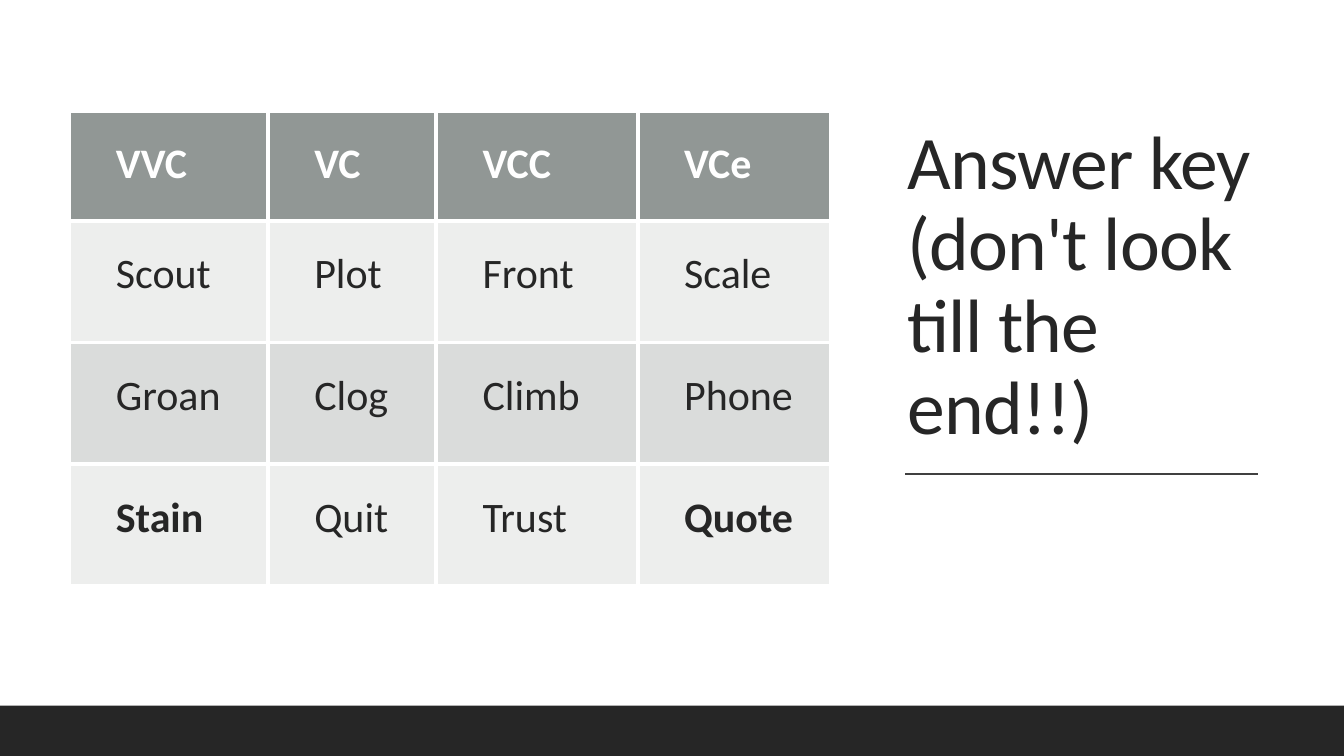
from dataclasses import dataclass

from lxml import etree
from pptx import Presentation
from pptx.dml.color import RGBColor
from pptx.enum.shapes import MSO_CONNECTOR, MSO_SHAPE
from pptx.enum.text import MSO_ANCHOR, MSO_AUTO_SIZE, PP_ALIGN
from pptx.oxml.ns import qn
from pptx.util import Cm, Pt

STRAIGHT = MSO_CONNECTOR.STRAIGHT
RECTANGLE = MSO_SHAPE.RECTANGLE
BOTTOM, TOP = MSO_ANCHOR.BOTTOM, MSO_ANCHOR.TOP
LEFT = PP_ALIGN.LEFT
NO_AUTOFIT = MSO_AUTO_SIZE.NONE
TITLE_ONLY = 5


@dataclass(frozen=True)
class Theme:
    font: str = "Calibri"
    title_size: int = 54
    cell_size: int = 30
    border_width: int = 3
    white: str = "FFFFFF"
    dark: str = "262626"
    rule: str = "404040"
    header: str = "636B68"
    band: str = "878E8B"


@dataclass(frozen=True)
class TableRow:
    words: tuple[str, ...]
    height: float
    fill: str
    opacity: int
    color: str
    bold_words: tuple[str, ...] = ()


THEME = Theme()
SLIDE_WIDTH, SLIDE_HEIGHT = 33.87, 19.05
BAR_HEIGHT = 1.27
COLUMN_WIDTHS = (5.0, 4.24, 5.08, 4.88)
HEADINGS = ("VVC", "VC", "VCC", "VCe")
ROWS = (
    TableRow(HEADINGS, 2.77, THEME.header, 70, THEME.white, HEADINGS),
    TableRow(("Scout", "Plot", "Front", "Scale"), 3.07, THEME.band, 15, THEME.dark),
    TableRow(("Groan", "Clog", "Climb", "Phone"), 3.07, THEME.band, 30, THEME.dark),
    TableRow(("Stain", "Quit", "Trust", "Quote"), 3.07, THEME.band, 15, THEME.dark,
             ("Stain", "Quote")),
)


def rgb(value: str) -> RGBColor:
    return RGBColor.from_string(value)


def style_font(font, size: int, color: str, bold: bool = False) -> None:
    font.name = THEME.font
    font.size = Pt(size)
    font.bold = bold
    font.color.rgb = rgb(color)


def add_title(page, text: str) -> None:
    title = page.shapes.title
    title.left, title.top = Cm(22.61), Cm(1.78)
    title.width, title.height = Cm(9.45), Cm(9.7)
    frame = title.text_frame
    frame.text = text
    frame.word_wrap = True
    frame.auto_size = NO_AUTOFIT
    frame.vertical_anchor = BOTTOM
    para = frame.paragraphs[0]
    para.alignment = LEFT
    para.line_spacing = 0.9
    style_font(para.font, THEME.title_size, THEME.dark)
    para.runs[0]._r.get_or_add_rPr().set("spc", "-50")


def add_rule(page) -> None:
    rule = page.shapes.add_connector(STRAIGHT, Cm(22.81), Cm(11.94), Cm(31.7), Cm(11.94))
    rule.line.color.rgb = rgb(THEME.rule)
    rule.line.width = Pt(1)
    etree.SubElement(rule._element.spPr, qn("a:effectLst"))


def add_bottom_bar(page) -> None:
    bar = page.shapes.add_shape(RECTANGLE, 0, Cm(SLIDE_HEIGHT - BAR_HEIGHT),
                                Cm(SLIDE_WIDTH), Cm(BAR_HEIGHT))
    bar.shadow.inherit = False
    bar.fill.solid()
    bar.fill.fore_color.rgb = rgb(THEME.dark)
    bar.line.fill.background()


def paint_cell(cell, fill: str, opacity: int) -> None:
    cell.fill.solid()
    cell.fill.fore_color.rgb = rgb(fill)
    properties = cell._tc.get_or_add_tcPr()
    fill_color = properties.find(qn("a:solidFill")).find(qn("a:srgbClr"))
    etree.SubElement(fill_color, qn("a:alpha"), val=str(opacity * 1000))
    # Borders come before the fill in the cell properties
    for index, side in enumerate(("lnL", "lnR", "lnT", "lnB")):
        border = etree.Element(qn(f"a:{side}"), w=str(Pt(THEME.border_width)))
        border_fill = etree.SubElement(border, qn("a:solidFill"))
        etree.SubElement(border_fill, qn("a:srgbClr"), val=THEME.white)
        properties.insert(index, border)


def add_word_table(page) -> None:
    table = page.shapes.add_table(
        len(ROWS), len(COLUMN_WIDTHS), Cm(1.75), Cm(2.79),
        Cm(sum(COLUMN_WIDTHS)), Cm(sum(row.height for row in ROWS))).table
    for column, width in zip(table.columns, COLUMN_WIDTHS):
        column.width = Cm(width)
    for table_row, row in zip(table.rows, ROWS):
        table_row.height = Cm(row.height)
        for cell, word in zip(table_row.cells, row.words):
            cell.text = word
            cell.vertical_anchor = TOP
            cell.margin_left = Cm(1.17)
            cell.margin_top = cell.margin_right = cell.margin_bottom = Cm(0.71)
            style_font(cell.text_frame.paragraphs[0].font, THEME.cell_size,
                       row.color, word in row.bold_words)
            paint_cell(cell, row.fill, row.opacity)


def main() -> None:
    deck = Presentation()
    deck.slide_width, deck.slide_height = Cm(SLIDE_WIDTH), Cm(SLIDE_HEIGHT)
    page = deck.slides.add_slide(deck.slide_layouts[TITLE_ONLY])
    page.background.fill.solid()
    page.background.fill.fore_color.rgb = rgb(THEME.white)

    # Heading and its rule
    add_title(page, "Answer key (don't look till the end!!)")
    add_rule(page)

    # Footer bar and word table
    add_bottom_bar(page)
    add_word_table(page)
    deck.save("out.pptx")


if __name__ == "__main__":
    main()
